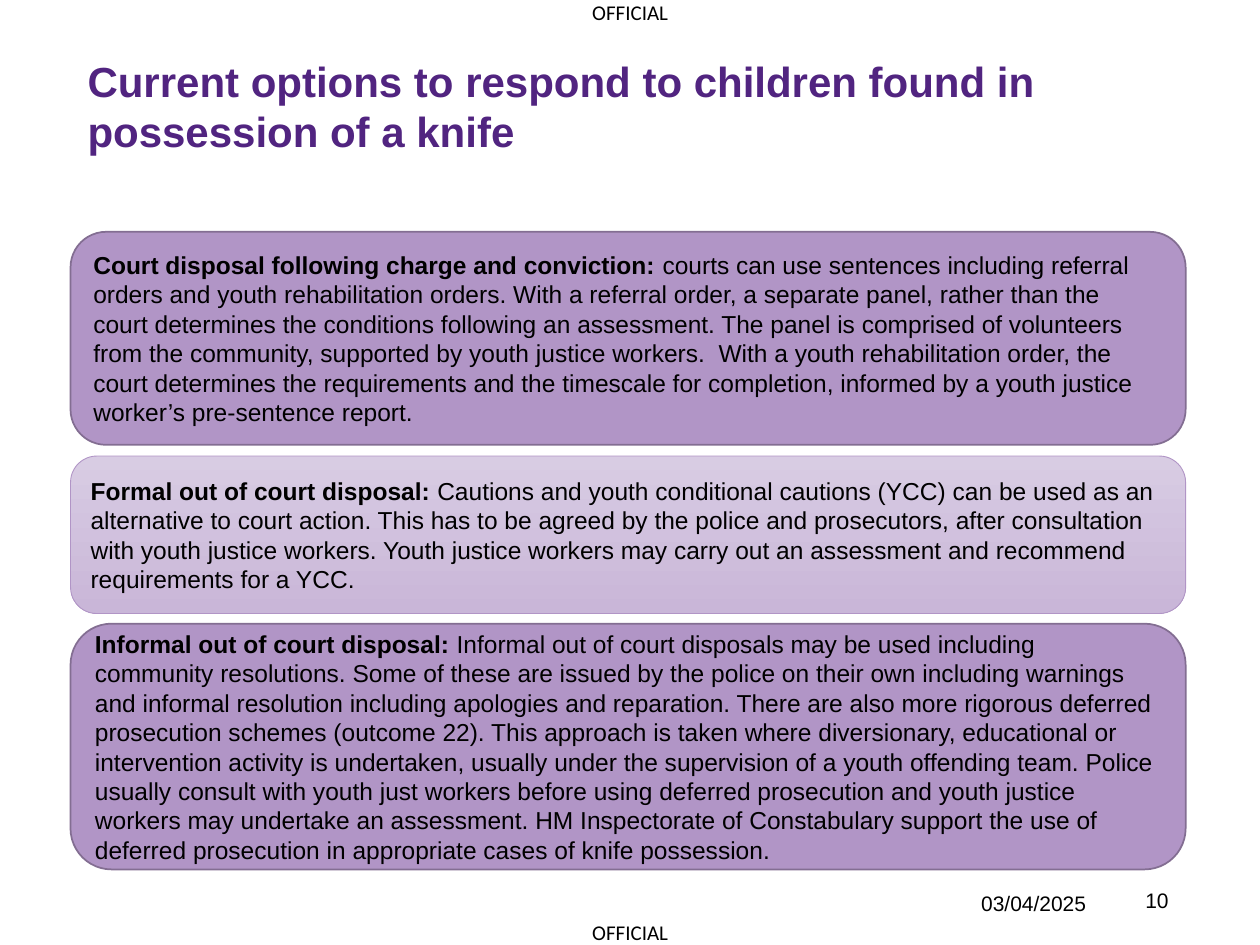
from pptx import Presentation
from pptx.dml.color import RGBColor
from pptx.enum.shapes import MSO_SHAPE
from pptx.enum.text import MSO_ANCHOR, PP_ALIGN
from pptx.util import Pt

ROUNDED = MSO_SHAPE.ROUNDED_RECTANGLE
TOP, MIDDLE = MSO_ANCHOR.TOP, MSO_ANCHOR.MIDDLE
LEFT, RIGHT = PP_ALIGN.LEFT, PP_ALIGN.RIGHT
TITLE_ONLY = 5

COLOURS = {
    "text": "000000",
    "title": "512480",
    "panel": "B195C6",
    "panel_line": "836E92",
    "light_top": "D8CCE3",
    "light_bottom": "C9B6D8",
}

# Top and height of each panel, whether it is light, heading, description
PANELS = [
    (132.5, 121.7, False, "Court disposal following charge and conviction: ",
     "courts can use sentences including referral orders and youth rehabilitation orders. "
     "With a referral order, a separate panel, rather than the court determines the "
     "conditions following an assessment. The panel is comprised of volunteers from the "
     "community, supported by youth justice workers.  With a youth rehabilitation order, "
     "the court determines the requirements and the timescale for completion, informed by "
     "a youth justice worker’s pre-sentence report."),
    (260.6, 90, True, "Formal out of court disposal: ",
     "Cautions and youth conditional cautions (YCC) can be used as an alternative to court "
     "action. This has to be agreed by the police and prosecutors, after consultation with "
     "youth justice workers. Youth justice workers may carry out an assessment and "
     "recommend requirements for a YCC."),
    (356.4, 140.4, False, "Informal out of court disposal: ",
     "Informal out of court disposals may be used including community resolutions. Some of "
     "these are issued by the police on their own including warnings and informal "
     "resolution including apologies and reparation. There are also more rigorous deferred "
     "prosecution schemes (outcome 22). This approach is taken where diversionary, "
     "educational or intervention activity is undertaken, usually under the supervision of "
     "a youth offending team. Police usually consult with youth just workers before using "
     "deferred prosecution and youth justice workers may undertake an assessment. HM "
     "Inspectorate of Constabulary support the use of deferred prosecution in appropriate "
     "cases of knife possession."),
]


def colour(name):
    return RGBColor.from_string(COLOURS[name])


def add_run(paragraph, text, size, bold=False, font="Arial", colour_name="text"):
    run = paragraph.add_run()
    run.text = text
    run.font.name = font
    run.font.size = Pt(size)
    run.font.bold = bold
    run.font.color.rgb = colour(colour_name)


def remove_margins(frame):
    frame.margin_left = frame.margin_right = frame.margin_top = frame.margin_bottom = 0


def set_title(slide, left, top, width, height):
    title = slide.shapes.title
    title.left, title.top, title.width, title.height = map(Pt, (left, top, width, height))
    frame = title.text_frame
    remove_margins(frame)
    frame.word_wrap = True
    frame.vertical_anchor = TOP
    paragraph = frame.paragraphs[0]
    paragraph.alignment = LEFT
    add_run(paragraph, "Current options to respond to children found in possession of a knife",
            24, bold=True, colour_name="title")


def add_label(slide, box, text, font="Arial", alignment=LEFT, anchor=TOP):
    frame = slide.shapes.add_textbox(*map(Pt, box)).text_frame
    remove_margins(frame)
    frame.word_wrap = alignment == RIGHT
    frame.vertical_anchor = anchor
    paragraph = frame.paragraphs[0]
    paragraph.alignment = alignment
    add_run(paragraph, text, 12, font=font)


def add_panel(slide, box, light, heading, description):
    panel = slide.shapes.add_shape(ROUNDED, *map(Pt, box))
    panel.shadow.inherit = False
    if light:
        panel.fill.gradient()
        panel.fill.gradient_angle = 270
        for stop, name in zip(panel.fill.gradient_stops, ("light_top", "light_bottom")):
            stop.color.rgb = colour(name)
    else:
        panel.fill.solid()
        panel.fill.fore_color.rgb = colour("panel")
    panel.line.color.rgb = colour("panel" if light else "panel_line")
    panel.line.width = Pt(0.5 if light else 1)
    frame = panel.text_frame
    frame.word_wrap = True
    frame.margin_right = Pt(9)
    frame.vertical_anchor = MIDDLE
    paragraph = frame.paragraphs[0]
    paragraph.alignment = LEFT
    add_run(paragraph, heading, 14, bold=True)
    add_run(paragraph, description, 14)


def main():
    presentation = Presentation()
    presentation.slide_width, presentation.slide_height = Pt(720), Pt(540)
    slide = presentation.slides.add_slide(presentation.slide_layouts[TITLE_ONLY])

    for top in (0, 525.6):
        add_label(slide, (338.4, top, 46, 14.4), "OFFICIAL", font="Calibri")
    set_title(slide, 50, 31.7, 620, 85)
    for top, height, light, heading, description in PANELS:
        add_panel(slide, (40.3, top, 637.2, height), light, heading, description)
    add_label(slide, (535.7, 509, 85, 14.4), "03/04/2025", alignment=RIGHT, anchor=MIDDLE)
    add_label(slide, (646.2, 507.2, 21.6, 14.4), "10", alignment=RIGHT, anchor=MIDDLE)

    presentation.save("out.pptx")


if __name__ == "__main__":
    main()
